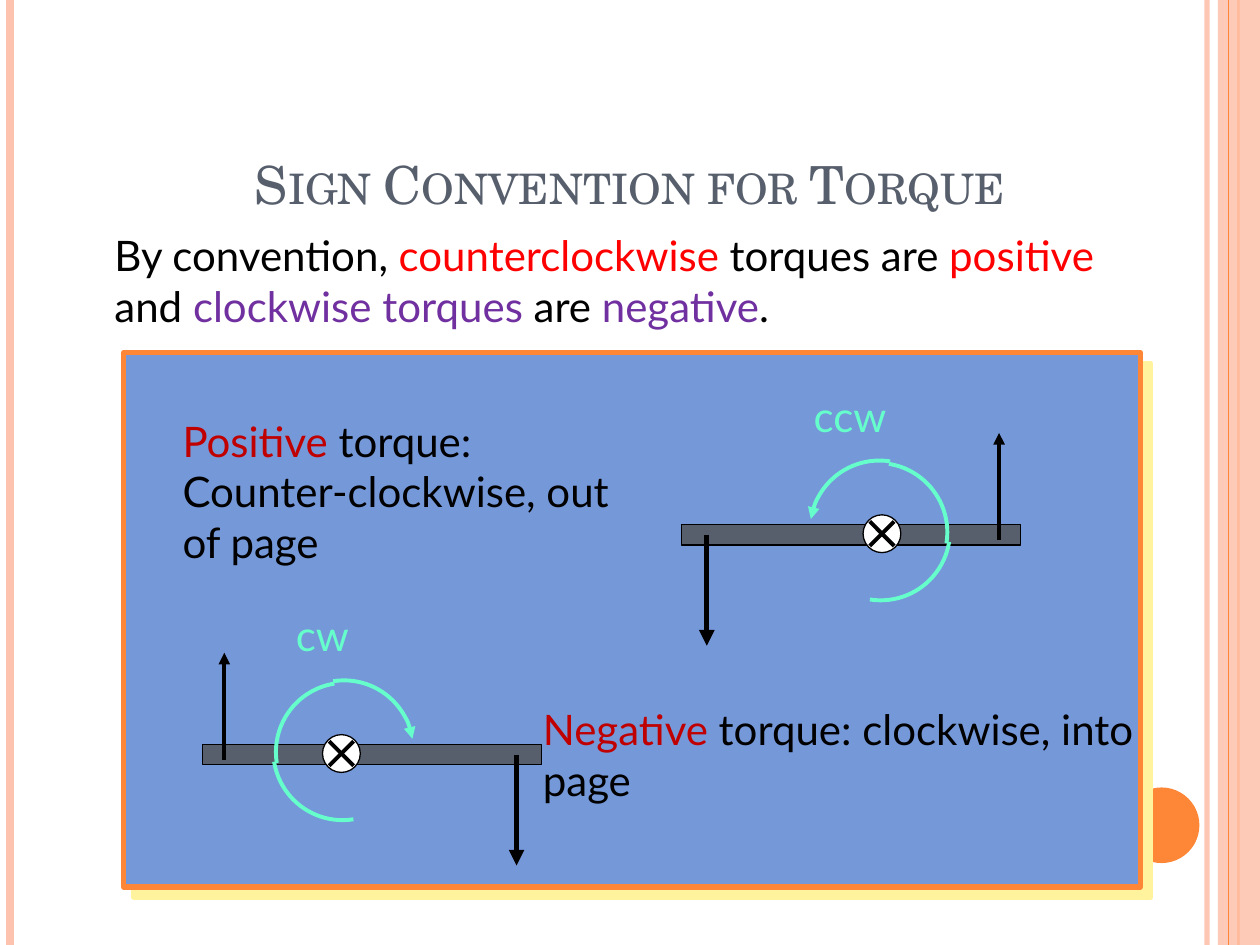
"""Slide on the sign convention for torque, with two mirrored lever diagrams."""
from lxml import etree
from pptx import Presentation
from pptx.dml.color import RGBColor
from pptx.enum.shapes import MSO_CONNECTOR, MSO_SHAPE
from pptx.enum.text import MSO_ANCHOR, PP_ALIGN
from pptx.oxml.ns import qn
from pptx.util import Pt

RECT, OVAL, ARC = MSO_SHAPE.RECTANGLE, MSO_SHAPE.OVAL, MSO_SHAPE.ARC
STRAIGHT = MSO_CONNECTOR.STRAIGHT
MIDDLE, BOTTOM = MSO_ANCHOR.MIDDLE, MSO_ANCHOR.BOTTOM
LEFT, CENTER = PP_ALIGN.LEFT, PP_ALIGN.CENTER

W, H = 720, 540
BLACK, WHITE, RED, DARK_RED, PURPLE = "000000", "FFFFFF", "FF0000", "C00000", "7030A0"
ORANGE, PEACH, SLATE, BLUE, YELLOW, AQUA = (
    "FE8637", "FEC3AE", "575F6D", "7598D9", "FFF39D", "66FFCC")

TITLE = "Sign Convention for Torque"
TEXTS = [
    ((58.3, 127.4, 618.5, 65.5), [
        ("By convention, ", BLACK), ("counterclockwise", RED), (" torques are ", BLACK),
        ("positive ", RED), ("and ", BLACK), ("clockwise torques ", PURPLE),
        ("are ", BLACK), ("negative", PURPLE), (".", BLACK)]),
    ((97.2, 233.3, 265, 94.3), [
        ("Positive", DARK_RED), (" torque: Counter-clockwise, out of page", BLACK)]),
    ((303.1, 398.2, 359.3, 65.5), [
        ("Negative", DARK_RED), (" torque: clockwise, into page", BLACK)]),
]
STRIPES = [(689.8, PEACH, 3, 93), (5.8, PEACH, 4.5, 100), (707.8, ORANGE, 1.5, 100)]

BAR = (115.9, 425.5, 193.7, 11.5)
PIVOT, PIVOT_R, CROSS = (195.1, 430.6), 10.8, 7
FORCES = [((295.2, 431.3), (295.2, 494.6), 3), ((128.2, 434.2), (128.2, 373), 2.25)]
ARCS = [(171, 197.3, 429.8), (81, 195.8, 429.1), (261, 196.6, 428.4)]
ARC_R, SWEEP, ARROW_START = 39.6, 90, 261
LABEL = (162, 341.3, 79.2, 43.2)
DIAGRAMS = [("cw", False), ("ccw", True)]
MIRROR_SUM, RISE = 699.1, 125.6


def color(value):
    return RGBColor.from_string(value)


def add_alpha(parent, percent):
    clr = parent.find(".//" + qn("a:srgbClr"))
    etree.SubElement(clr, qn("a:alpha"), val=str(percent * 1000))


def set_line(sp, clr, width):
    sp.line.color.rgb = color(clr)
    sp.line.width = Pt(width)


def add_arrowhead(sp, end):
    etree.SubElement(sp.line._get_or_add_ln(), qn(f"a:{end}End"), type="triangle")


def add_shape(s, kind, box, fill=None, line=None, width=0.75):
    sp = s.shapes.add_shape(kind, *map(Pt, box))
    sp.shadow.inherit = False
    if fill:
        sp.fill.solid()
        sp.fill.fore_color.rgb = color(fill)
    else:
        sp.fill.background()
    if line:
        set_line(sp, line, width)
    else:
        sp.line.fill.background()
    return sp


def add_line(s, start, end, clr, width):
    sp = s.shapes.add_connector(STRAIGHT, *map(Pt, (*start, *end)))
    set_line(sp, clr, width)
    etree.SubElement(sp._element.spPr, qn("a:effectLst"))
    return sp


def add_arrow(s, start, end, clr, width):
    sp = s.shapes.add_connector(STRAIGHT, *map(Pt, (*start, *end)))
    set_line(sp, clr, width)
    add_arrowhead(sp, "tail")
    etree.SubElement(sp._element.spPr, qn("a:effectLst"))


def write(sp, runs, font, size, anchor=MIDDLE, align=LEFT):
    tf = sp.text_frame
    for name, value in {"word_wrap": True, "vertical_anchor": anchor}.items():
        setattr(tf, name, value)
    p = tf.paragraphs[0]
    p.alignment = align
    for text, clr in runs:
        r = p.add_run()
        r.text = text
        for name, value in {"name": font, "size": Pt(size), "bold": False}.items():
            setattr(r.font, name, value)
        r.font.color.rgb = color(clr)
    return p


def add_text(s, box, runs):
    write(s.shapes.add_textbox(*map(Pt, box)), runs, "Lato", 24)


def add_frame(s):
    for x, clr, width, opacity in STRIPES:
        stripe = add_line(s, (x, 0), (x, H), clr, width)
        if opacity < 100:
            add_alpha(stripe.line._get_or_add_ln(), opacity)
    band = add_shape(s, RECT, (696, 0, W - 696, H), PEACH)
    add_alpha(band._element.spPr, 87)
    add_line(s, (702, 0), (702, H), ORANGE, 0.75)
    add_shape(s, OVAL, (642.2, 450, 43.2, 43.2), ORANGE)


def add_panel(s):
    panel = add_shape(s, RECT, (70.6, 201.6, 581, 305.3), BLUE, ORANGE, 3)
    effects = panel._element.spPr.find(qn("a:effectLst"))
    shadow = etree.SubElement(effects, qn("a:outerShdw"), blurRad="0",
                              dist=str(Pt(8.5)), dir="2700000", algn="ctr",
                              rotWithShape="0")
    etree.SubElement(shadow, qn("a:srgbClr"), val=YELLOW)


def add_diagram(s, label, mirrored):
    def point(x, y):
        return (MIRROR_SUM - x, y - RISE) if mirrored else (x, y)

    def box(x, y, w, h):
        return (*point(x + w if mirrored else x, y), w, h)

    def square(cx, cy, radius):
        return box(cx - radius, cy - radius, 2 * radius, 2 * radius)

    cx, cy = PIVOT
    add_shape(s, RECT, box(*BAR), SLATE, BLACK)
    add_shape(s, OVAL, square(cx, cy, PIVOT_R), WHITE, BLACK)
    for dy in (CROSS, -CROSS):
        add_line(s, point(cx - CROSS, cy - dy), point(cx + CROSS, cy + dy), BLACK, 2.25)
    for start, end, width in FORCES:
        add_arrow(s, point(*start), point(*end), BLACK, width)
    for angle, ax, ay in ARCS:
        arc = add_shape(s, ARC, square(ax, ay, ARC_R), None, AQUA, 2.25)
        first = (180 - angle - SWEEP) % 360 if mirrored else angle
        for i, degrees in enumerate((first, (first + SWEEP) % 360)):
            arc.adjustments[i] = degrees * 0.6
        if angle == ARROW_START:
            add_arrowhead(arc, "head" if mirrored else "tail")
    add_text(s, box(*LABEL), [(label, AQUA)])


def main():
    prs = Presentation()
    prs.slide_width, prs.slide_height = Pt(W), Pt(H)
    s = prs.slides.add_slide(prs.slide_layouts[5])
    add_frame(s)
    add_panel(s)
    title = s.shapes.title
    for name, value in zip(("left", "top", "width", "height"), (72, 36.7, 576, 90)):
        setattr(title, name, Pt(value))
    p = write(title, [(TITLE, SLATE)], "TeX Gyre Schola", 30, BOTTOM, CENTER)
    p.runs[0].font._element.set("cap", "small")
    for box, runs in TEXTS:
        add_text(s, box, runs)
    for label, mirrored in DIAGRAMS:
        add_diagram(s, label, mirrored)
    prs.save("out.pptx")


if __name__ == "__main__":
    main()
